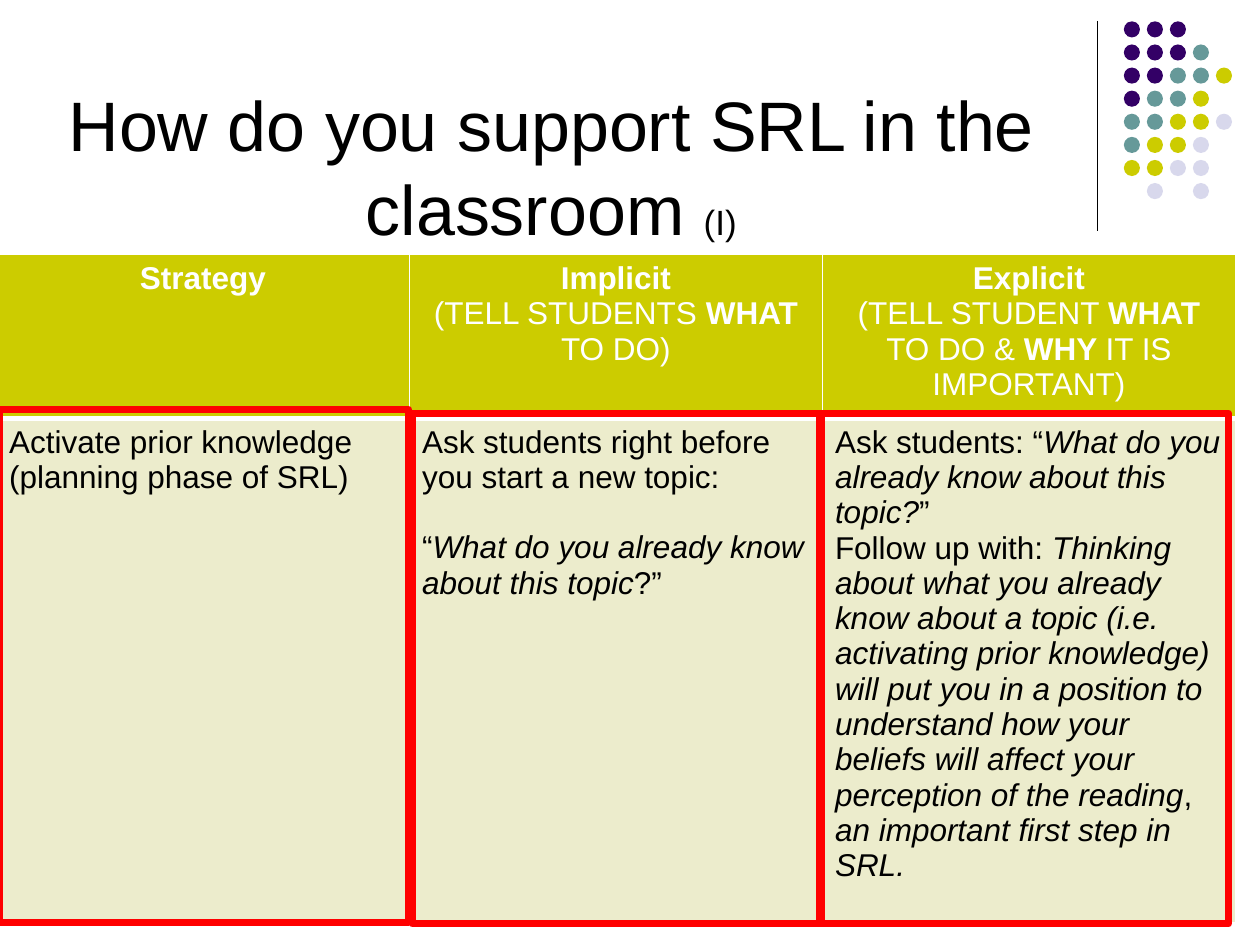
import pptx
import pptx.util
import pptx.dml.color
import pptx.enum.shapes
import pptx.enum.text
import pptx.oxml.ns
from lxml import etree

Pt = pptx.util.Pt
SHAPE = pptx.enum.shapes.MSO_SHAPE
ALIGN = pptx.enum.text.PP_ALIGN
C = {"black": "000000", "white": "FFFFFF", "purple": "330066", "teal": "669999",
     "olive": "CCCC00", "lilac": "D8D8EC", "cream": "ECECCC", "red": "FF0000"}


def rgb(name):
    return pptx.dml.color.RGBColor.from_string(C[name])


def add_run(p, text, size, color, style=""):
    r = p.add_run()
    r.text = text
    r.font.name = "Arial"
    r.font.size = Pt(size)
    r.font.color.rgb = rgb(color)
    r.font.bold = "b" in style
    r.font.italic = "i" in style


prs = pptx.Presentation()
prs.slide_width, prs.slide_height = Pt(720), Pt(540)
s = prs.slides.add_slide(prs.slide_layouts[5])

# Rule beside the dots
rule = s.shapes.add_connector(pptx.enum.shapes.MSO_CONNECTOR.STRAIGHT,
                              Pt(627), Pt(12), Pt(627), Pt(132))
rule.line.color.rgb = rgb("black")
rule.line.width = Pt(0.75)
etree.SubElement(rule._element.spPr, pptx.oxml.ns.qn("a:effectLst"))

# Dot pattern: one letter per dot, "." for a gap
DOTS = ["PPP", "PPPT", "PPTTO", "PTTO", "TTOOL", "TOOL", "OOLL", ".L.L"]
DOT_COLORS = {"P": "purple", "T": "teal", "O": "olive", "L": "lilac"}
dots = s.shapes.add_group_shape()
for row, letters in enumerate(DOTS):
    for col, letter in enumerate(letters):
        if letter == ".":
            continue
        sp = dots.shapes.add_shape(SHAPE.OVAL, Pt(642.2 + 13.15 * col),
                                   Pt(12.2 + 13.2 * row), Pt(9.2), Pt(9.2))
        sp.shadow.inherit = False
        sp.fill.solid()
        sp.fill.fore_color.rgb = rgb(DOT_COLORS[letter])
        sp.line.fill.background()

# Title
title = s.shapes.title
title.left, title.top, title.width, title.height = Pt(0), Pt(42), Pt(630), Pt(104)
tf = title.text_frame
tf.word_wrap = True
tf.auto_size = pptx.enum.text.MSO_AUTO_SIZE.NONE
tf.vertical_anchor = pptx.enum.text.MSO_ANCHOR.BOTTOM
p = tf.paragraphs[0]
p.alignment = ALIGN.CENTER
add_run(p, "How do you support SRL in the classroom ", 40, "black")
add_run(p, "(I)", 20, "black")

# Table: rows of cells, cells of paragraphs, paragraphs of (text, style) runs
ROWS = [
    [
        [[("Strategy", "b")]],
        [[("Implicit", "b")],
         [("(TELL STUDENTS ", ""), ("WHAT ", "b"), ("TO DO)", "")]],
        [[("Explicit", "b")],
         [("(TELL STUDENT ", ""), ("WHAT", "b"), (" TO DO & ", ""),
          ("WHY ", "b"), ("IT IS IMPORTANT)", "")]],
    ],
    [
        [[("Activate prior knowledge", "")], [("(planning phase of SRL)", "")]],
        [[("Ask students right before you start a new topic:", "")],
         [("“", ""), ("What do you already know about this topic", "i"), ("?”", "")]],
        [[("Ask students: “", ""),
          ("What do you already know about this topic?", "i"), ("”", "")],
         [("Follow up with: ", ""),
          ("Thinking about what you already know about a topic (i.e. activating "
           "prior knowledge) will put you in a position to understand how your "
           "beliefs will affect your perception of the reading", "i"),
          (", ", ""), ("an important first step in SRL.", "i")]],
    ],
]
# Font colour, fill, alignment and bottom border of each row
ROW_STYLES = [("white", "olive", ALIGN.CENTER, 3), ("black", "cream", ALIGN.LEFT, 1)]
table = s.shapes.add_table(2, 3, Pt(-2), Pt(145.5), Pt(708), Pt(382)).table
for column in table.columns:
    column.width = Pt(236)
table.rows[0].height, table.rows[1].height = Pt(93.6), Pt(288)
for i, (color, fill, align, bottom) in enumerate(ROW_STYLES):
    for j, paragraphs in enumerate(ROWS[i]):
        cell = table.cell(i, j)
        tcPr = cell._tc.get_or_add_tcPr()
        for side, width in zip("LRTB", (1, 1, 3 if i else 1, bottom)):
            ln = etree.SubElement(tcPr, pptx.oxml.ns.qn("a:ln" + side), w=str(Pt(width)))
            solid = etree.SubElement(ln, pptx.oxml.ns.qn("a:solidFill"))
            etree.SubElement(solid, pptx.oxml.ns.qn("a:srgbClr"), val=C["white"])
        cell.fill.solid()
        cell.fill.fore_color.rgb = rgb(fill)
        tf = cell.text_frame
        for k, runs in enumerate(paragraphs):
            p = tf.add_paragraph() if k else tf.paragraphs[0]
            p.alignment = align
            for text, style in runs:
                add_run(p, text, 18, color, style)

# One-line gap before the question in the implicit column
table.cell(1, 1).text_frame.paragraphs[1].space_before = Pt(20)

# Red frames around the second row
for left, top, height in [(235.5, 236, 292), (-0.5, 234, 293), (468, 236, 292)]:
    sp = s.shapes.add_shape(SHAPE.RECTANGLE, Pt(left), Pt(top), Pt(234), Pt(height))
    sp.shadow.inherit = False
    sp.fill.background()
    sp.line.color.rgb = rgb("red")
    sp.line.width = Pt(4)

prs.save("out.pptx")
